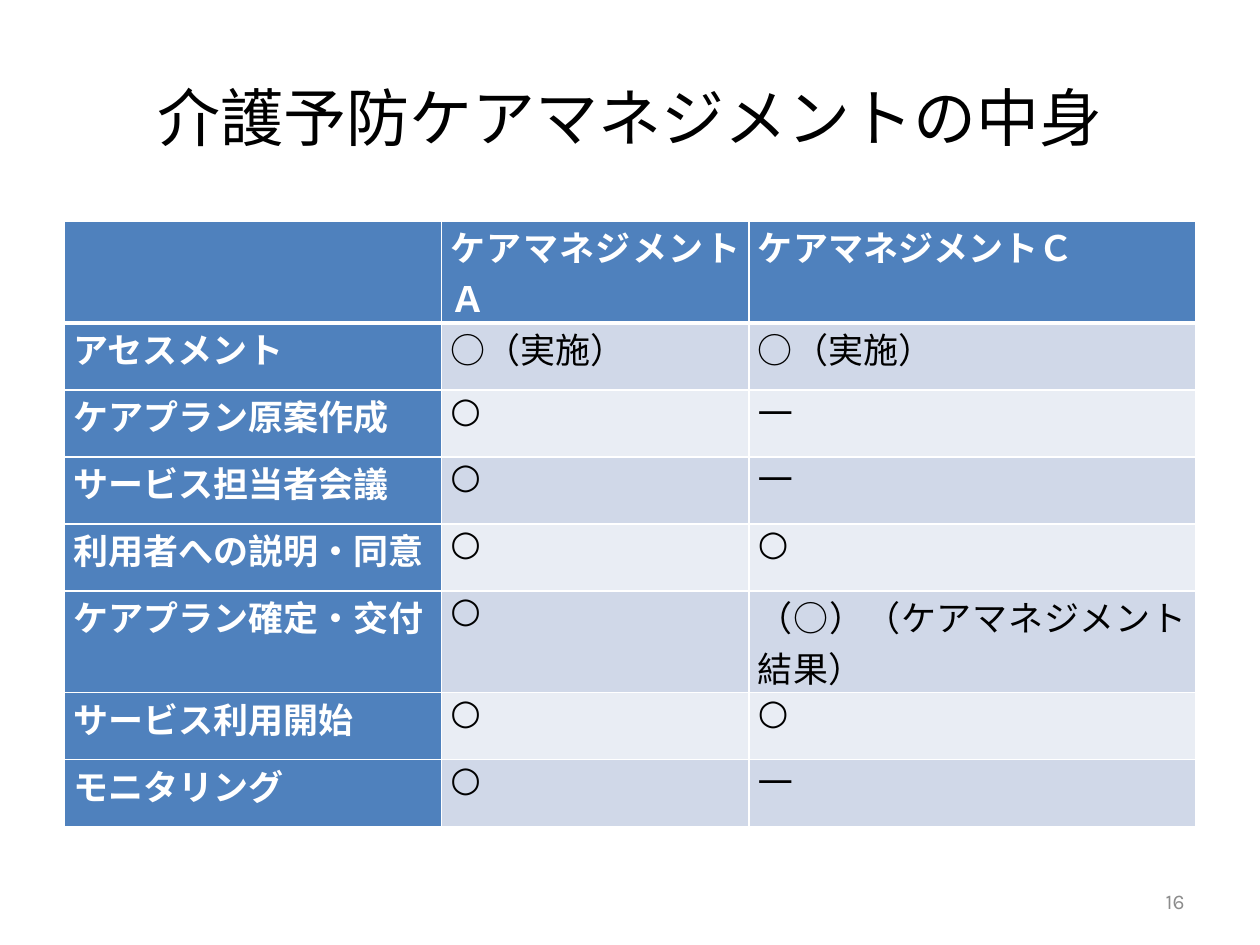
import dataclasses

import pptx
import pptx.dml.color
import pptx.enum.text
import pptx.oxml
import pptx.oxml.ns
import pptx.util
from pptx.util import Cm, Pt

FONT = "Karla"
BLUE, WHITE, BLACK, GRAY = "4F81BD", "FFFFFF", "000000", "8C8C8C"
BANDS = ("D0D8E8", "E9EDF4")
ALIGN = pptx.enum.text.PP_ALIGN
MIDDLE = pptx.enum.text.MSO_ANCHOR.MIDDLE
WIDTHS = (7.6, 6.2, 9.0)
HEIGHT = 1.35


@dataclasses.dataclass
class Step:
    name: str
    care_a: str
    care_c: str


STEPS = (
    Step("アセスメント", "○（実施）", "○（実施）"),
    Step("ケアプラン原案作成", "○", "―"),
    Step("サービス担当者会議", "○", "―"),
    Step("利用者への説明・同意", "○", "○"),
    Step("ケアプラン確定・交付", "○", "（○）（ケアマネジメント結果）"),
    Step("サービス利用開始", "○", "○"),
    Step("モニタリング", "○", "―"),
)


def color(code: str) -> pptx.dml.color.RGBColor:
    return pptx.dml.color.RGBColor.from_string(code)


def write(frame, text: str, size: float, code: str, align, bold: bool = False) -> None:
    frame.text = text
    para = frame.paragraphs[0]
    para.alignment = align
    for run in para.runs:
        run.font.size = Pt(size)
        run.font.bold = bold
        run.font.name = FONT
        run.font.color.rgb = color(code)


def edge(cell, side: str, width: float) -> None:
    """Draw one white border; sides go in the order L, R, T, B."""
    cell._tc.get_or_add_tcPr().append(pptx.oxml.parse_xml(
        f'<a:ln{side} {pptx.oxml.ns.nsdecls("a")} w="{Pt(width)}">'
        f'<a:solidFill><a:srgbClr val="{WHITE}"/></a:solidFill></a:ln{side}>'))


def fill_cell(cell, text: str, row: int, col: int) -> None:
    head = row == 0 or col == 0
    cell.margin_left = cell.margin_right = Cm(0.18)
    cell.margin_top = cell.margin_bottom = 0
    edge(cell, "L", 1)
    edge(cell, "R", 1)
    edge(cell, "T", 3 if row == 1 else 1)
    edge(cell, "B", 3 if row == 0 else 1)
    cell.fill.solid()
    cell.fill.fore_color.rgb = color(BLUE if head else BANDS[(row - 1) % 2])
    write(cell.text_frame, text, 20, WHITE if head else BLACK, ALIGN.JUSTIFY, head)


def add_grid(slide) -> None:
    rows = [("", "ケアマネジメントＡ", "ケアマネジメントＣ")]
    rows += [dataclasses.astuple(step) for step in STEPS]
    grid = slide.shapes.add_table(
        len(rows), len(WIDTHS), Cm(1.3), Cm(4.46),
        Cm(sum(WIDTHS)), Cm(HEIGHT * len(rows))).table
    for col, width in enumerate(WIDTHS):
        grid.columns[col].width = Cm(width)
    for r, texts in enumerate(rows):
        grid.rows[r].height = Cm(HEIGHT)
        for c, text in enumerate(texts):
            fill_cell(grid.cell(r, c), text, r, c)


def main() -> None:
    deck = pptx.Presentation()
    deck.slide_width, deck.slide_height = Cm(25.4), Cm(19.05)
    slide = deck.slides.add_slide(deck.slide_layouts[5])

    title = slide.shapes.title
    title.left, title.top = Cm(1.27), Cm(0.76)
    title.width, title.height = Cm(22.86), Cm(3.18)
    title.text_frame.vertical_anchor = MIDDLE
    write(title.text_frame, "介護予防ケアマネジメントの中身", 36, BLACK, ALIGN.CENTER)

    add_grid(slide)

    page = slide.shapes.add_textbox(Cm(18.2), Cm(17.66), Cm(5.93), Cm(1.01))
    page.text_frame.word_wrap = True
    page.text_frame.vertical_anchor = MIDDLE
    write(page.text_frame, "16", 12, GRAY, ALIGN.RIGHT)

    deck.save("out.pptx")


if __name__ == "__main__":
    main()
